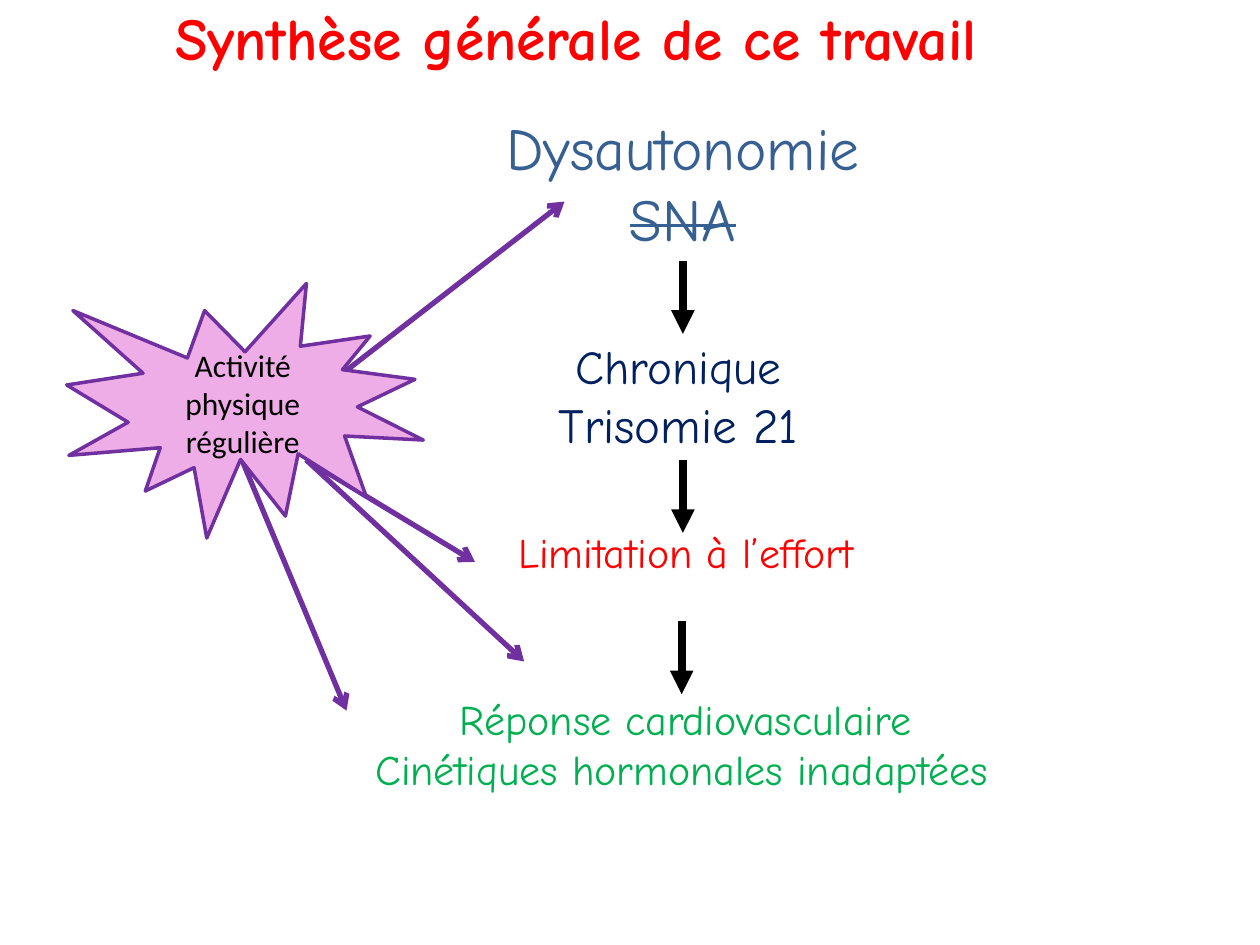
"""Build the summary slide linking dysautonomia, trisomy 21 and physical activity."""
import pptx
import pptx.util
import pptx.dml.color
import pptx.enum.shapes
import pptx.enum.text
import pptx.oxml
from pptx.util import Inches

TITLE_FONT, BODY_FONT = "Comic Neue", "Calibri"
PURPLE, BLACK = "7030A0", "000000"
CENTER = pptx.enum.text.PP_ALIGN.CENTER
LEFT = pptx.enum.text.PP_ALIGN.LEFT

TEXTS = {
    "symptom": {"at": (3.66, 0.84, 3.52, 1.23), "color": "376092",
                "lines": [[("Dysautonomie ", 34, False), ("SNA", 34, True)]]},
    "condition": {"at": (3.77, 2.64, 3.23, 1.01), "color": "002060",
                  "lines": [[("Chronique", 27, False)], [("Trisomie 21", 28, False)]]},
    "title": {"at": (1.31, -0.03, 7.57, 0.66), "color": "FF0000",
              "align": LEFT, "wrap": False, "bold": True,
              "lines": [[("Synthèse générale de ce travail", 34, False)]]},
    "limitation": {"at": (3.34, 4.14, 4.21, 0.49), "color": "FF0000",
                   "lines": [[("Limitation à l’effort", 24, False)]]},
    "heart": {"at": (2.93, 5.46, 5.02, 0.49), "color": "00B050",
              "lines": [[("Réponse cardiovasculaire", 24, False)]]},
    "hormones": {"at": (2.43, 5.86, 5.96, 0.49), "color": "00B050",
                 "lines": [[("Cinétiques hormonales inadaptées", 24, False)]]},
}
DROP = 0.58
CHAIN = [(5.42, 2.07), (5.42, 3.65), (5.41, 4.93)]
EFFECTS = [
    ((1.92, 3.65), (2.75, 5.64)),
    ((2.43, 3.65), (4.16, 5.25)),
    ((2.43, 3.65), (3.77, 4.46)),
    ((2.75, 2.94), (4.48, 1.6)),
]
BURST = {"at": (0.53, 2.25, 2.83, 2.02), "fill": "EFADE7",
         "text": "Activité physique régulière"}


def rgb(value):
    """Turn a hex string into a colour."""
    return pptx.dml.color.RGBColor.from_string(value)


def apply(target, values):
    """Set each attribute named in a dict."""
    for name, value in values.items():
        setattr(target, name, value)


def add_span(para, text, size, color, font, bold=False, strike=False):
    """Append one formatted run to a paragraph."""
    span = para.add_run()
    span.text = text
    apply(span.font, {"size": pptx.util.Pt(size), "name": font, "bold": bold})
    span.font.color.rgb = rgb(color)
    if strike:
        span.font._element.set("strike", "sngStrike")


def add_text(page, at, lines, color, align=CENTER, wrap=True, bold=False):
    """Add a text box holding lines of (text, size, strike) spans."""
    box = page.shapes.add_textbox(*map(Inches, at))
    frame = box.text_frame
    apply(frame, {
        "word_wrap": wrap,
        "auto_size": pptx.enum.text.MSO_AUTO_SIZE.SHAPE_TO_FIT_TEXT,
        "margin_left": Inches(0.08), "margin_right": Inches(0.08),
        "margin_top": Inches(0.04), "margin_bottom": Inches(0.04),
    })
    for index, spans in enumerate(lines):
        para = frame.add_paragraph() if index else frame.paragraphs[0]
        para.alignment = align
        for text, size, strike in spans:
            add_span(para, text, size, color, TITLE_FONT, bold, strike)
    return box


def add_arrow(page, start, end, color, width, head):
    """Add a straight arrow without shadow."""
    arrow = page.shapes.add_connector(
        pptx.enum.shapes.MSO_CONNECTOR.STRAIGHT, *map(Inches, start + end))
    arrow.line.color.rgb = rgb(color)
    arrow.line.width = pptx.util.Pt(width)
    line = arrow.line._get_or_add_ln()
    pptx.oxml.ns.qn("a:tailEnd")
    tail = line.makeelement(pptx.oxml.ns.qn("a:tailEnd"), {"type": head})
    line.append(tail)
    properties = arrow._element.spPr
    properties.append(properties.makeelement(pptx.oxml.ns.qn("a:effectLst"), {}))
    return arrow


def add_burst(page, at, fill, text):
    """Add the star burst with its centred label."""
    burst = page.shapes.add_shape(
        pptx.enum.shapes.MSO_SHAPE.EXPLOSION1, *map(Inches, at))
    burst.shadow.inherit = False
    burst.fill.solid()
    burst.fill.fore_color.rgb = rgb(fill)
    burst.line.color.rgb = rgb(PURPLE)
    burst.line.width = pptx.util.Pt(2)
    apply(burst.text_frame, {
        "word_wrap": True, "vertical_anchor": pptx.enum.text.MSO_ANCHOR.MIDDLE})
    para = burst.text_frame.paragraphs[0]
    para.alignment = CENTER
    add_span(para, text, 18, BLACK, BODY_FONT)


def main():
    """Assemble and save the deck."""
    deck = pptx.Presentation()
    apply(deck, {"slide_width": Inches(10), "slide_height": Inches(7.5)})
    page = deck.slides.add_slide(deck.slide_layouts[6])
    boxes = {name: add_text(page, **entry) for name, entry in TEXTS.items()}
    chain = [add_arrow(page, (x, y), (x, y + DROP), BLACK, 4.5, "triangle")
             for x, y in CHAIN]
    chain[0].begin_connect(boxes["symptom"], 2)
    for start, end in EFFECTS:
        add_arrow(page, start, end, PURPLE, 3, "arrow")
    add_burst(page, **BURST)
    deck.save("out.pptx")


if __name__ == "__main__":
    main()
